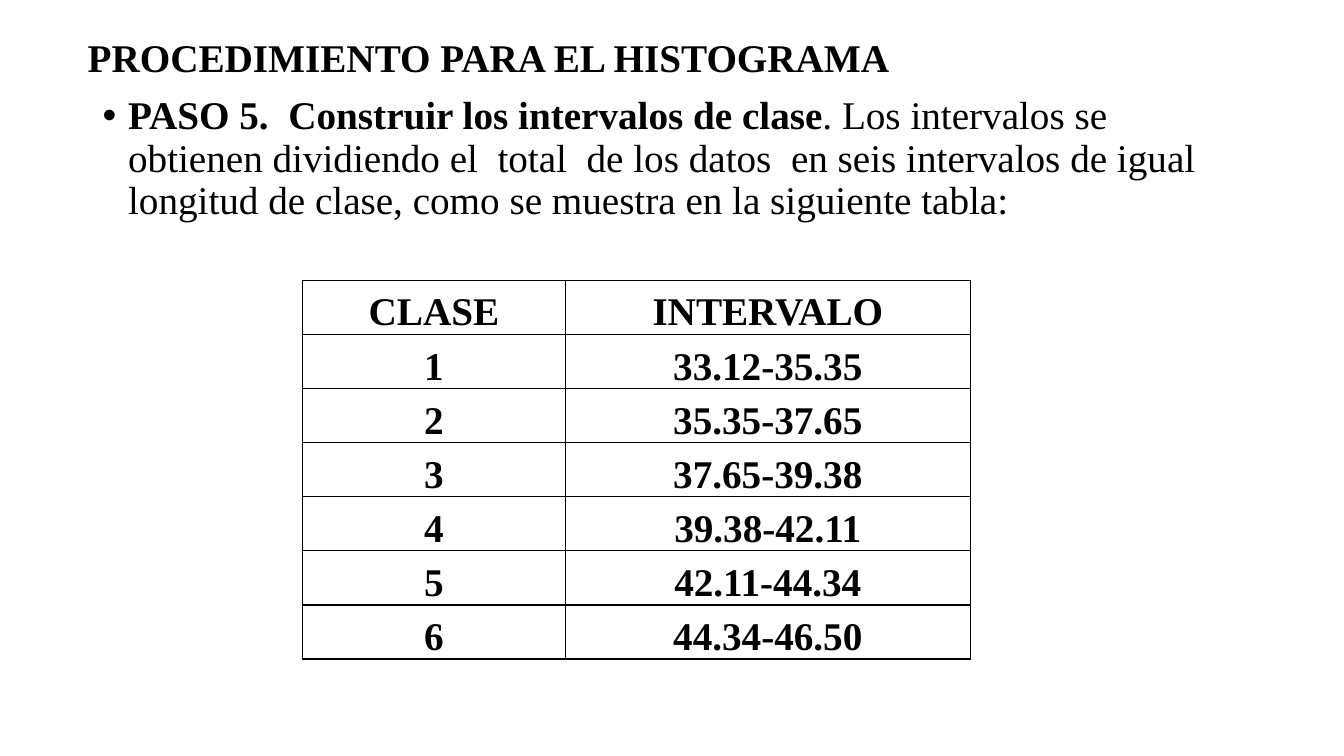
from lxml.etree import SubElement
from pptx import Presentation
from pptx.dml.color import RGBColor
from pptx.enum.text import MSO_ANCHOR, PP_ALIGN
from pptx.oxml.ns import qn
from pptx.util import Cm, Pt

COLORS = {"ink": "000000", "paper": "FFFFFF"}
FONT = "Times New Roman"
TEXT_SIZE = 28
INTERVALS = [
    ("CLASE", "INTERVALO"),
    ("1", "33.12-35.35"),
    ("2", "35.35-37.65"),
    ("3", "37.65-39.38"),
    ("4", "39.38-42.11"),
    ("5", "42.11-44.34"),
    ("6", "44.34-46.50"),
]


def add_span(para, text, size=TEXT_SIZE, bold=True, color="ink"):
    span = para.add_run()
    span.text = text
    span.font.name = FONT
    span.font.size = Pt(size)
    span.font.bold = bold
    span.font.color.rgb = RGBColor.from_string(COLORS[color])


def add_text_box(page, left, top, width, height, anchor=MSO_ANCHOR.TOP):
    """Add a wrapping text box and return its first paragraph."""
    box = page.shapes.add_textbox(Cm(left), Cm(top), Cm(width), Cm(height))
    box.text_frame.word_wrap = True
    box.text_frame.vertical_anchor = anchor
    para = box.text_frame.paragraphs[0]
    para.line_spacing = 0.9
    return para


def set_bullet(para, indent, symbol="•"):
    properties = para._p.get_or_add_pPr()
    properties.set("marL", str(Cm(indent)))
    properties.set("indent", str(-Cm(indent)))
    SubElement(properties, qn("a:buFont"), typeface="Arial")
    SubElement(properties, qn("a:buChar"), char=symbol)


def set_borders(cell, width=1, color="ink"):
    properties = cell._tc.get_or_add_tcPr()
    for side in ("L", "R", "T", "B"):
        line = SubElement(properties, qn(f"a:ln{side}"), w=str(Pt(width)))
        fill = SubElement(line, qn("a:solidFill"))
        SubElement(fill, qn("a:srgbClr"), val=COLORS[color])


def fill_cell(cell, text):
    cell.margin_left = cell.margin_right = Cm(0.13)
    cell.margin_top = cell.margin_bottom = 0
    cell.vertical_anchor = MSO_ANCHOR.BOTTOM
    set_borders(cell)
    cell.fill.background()
    para = cell.text_frame.paragraphs[0]
    para.alignment = PP_ALIGN.CENTER
    para.line_spacing = 1.15
    para.space_after = Pt(10)
    add_span(para, text)


def add_table(page, rows, left, top, column_widths, row_height):
    frame = page.shapes.add_table(
        len(rows), len(column_widths), Cm(left), Cm(top),
        Cm(sum(column_widths)), Cm(row_height * len(rows)))
    table = frame.table
    table.first_row = table.horz_banding = False
    for column, width in zip(table.columns, column_widths):
        column.width = Cm(width)
    for row, texts in zip(table.rows, rows):
        row.height = Cm(row_height)
        for cell, text in zip(row.cells, texts):
            fill_cell(cell, text)


def main():
    deck = Presentation()
    deck.slide_width, deck.slide_height = Cm(33.87), Cm(19.05)
    page = deck.slides.add_slide(deck.slide_layouts[6])
    page.background.fill.solid()
    page.background.fill.fore_color.rgb = RGBColor.from_string(COLORS["paper"])

    title = add_text_box(page, 1.96, 0.71, 29.21, 1.6, anchor=MSO_ANCHOR.MIDDLE)
    add_span(title, "PROCEDIMIENTO PARA EL HISTOGRAMA")

    step = add_text_box(page, 2.34, 2.29, 29.21, 14.86)
    step.space_before = Pt(10)
    set_bullet(step, 0.64)
    add_span(step, "PASO 5.  Construir los intervalos de clase")
    add_span(step, ". Los intervalos se obtienen dividiendo el  total  de los datos  "
                   "en seis intervalos de igual longitud de clase, como se muestra "
                   "en la siguiente tabla:", bold=False)

    add_table(page, INTERVALS, 7.62, 7.06, (6.63, 10.2), 1.25)
    deck.save("out.pptx")


if __name__ == "__main__":
    main()
